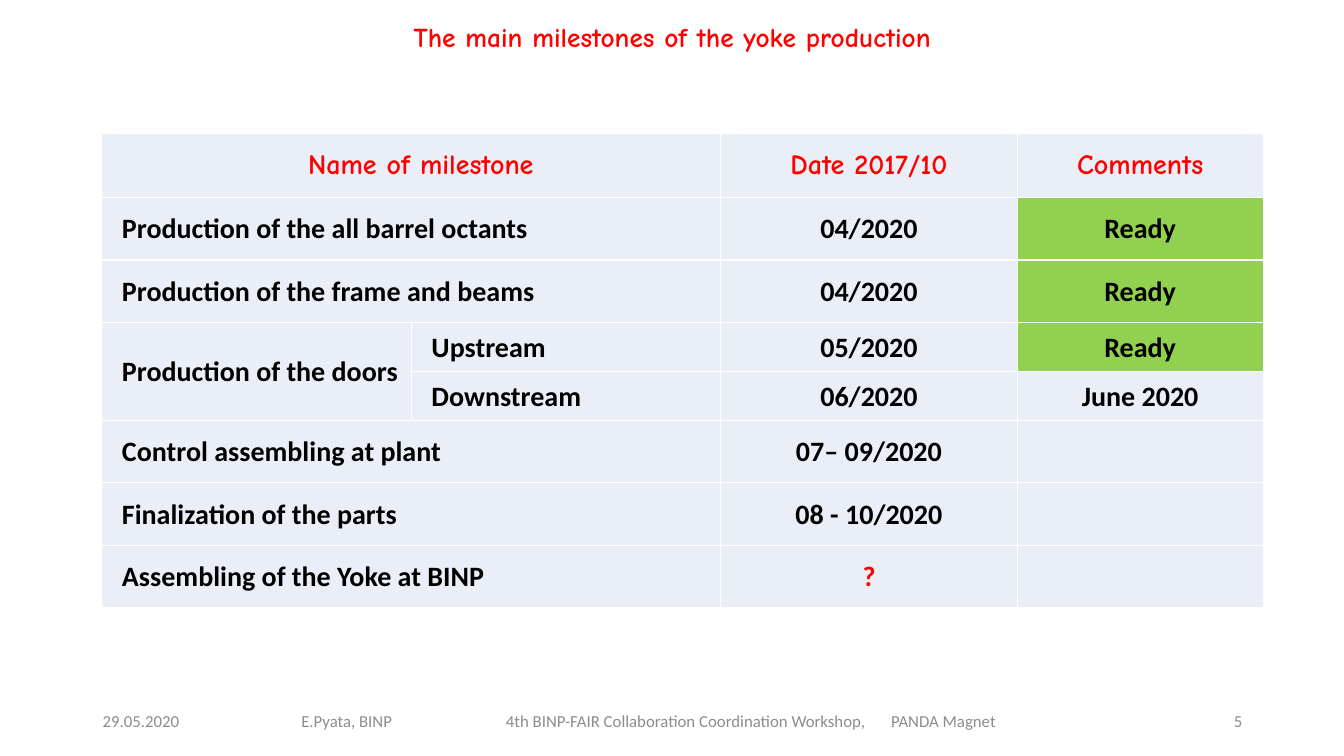
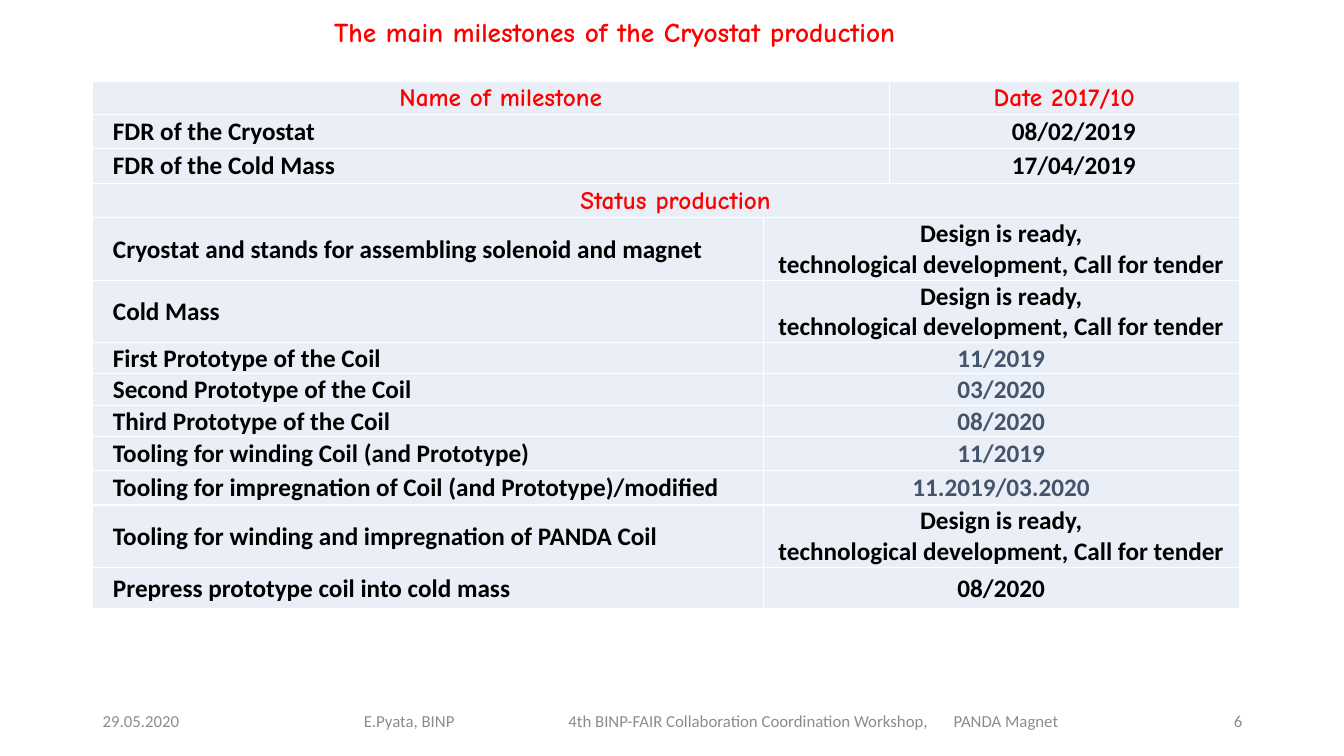
import pptx
import pptx.dml.color
import pptx.enum.text
import pptx.oxml
import pptx.oxml.ns
import pptx.util

Inches = pptx.util.Inches
ALIGN = pptx.enum.text.PP_ALIGN
MIDDLE = pptx.enum.text.MSO_ANCHOR.MIDDLE
TOP = pptx.enum.text.MSO_ANCHOR.TOP

# Shared style
BODY_FONT, ACCENT_FONT = "Calibri", "Comic Neue"
RED, BLACK, SLATE, GRAY = "FF0000", "000000", "44546A", "8C8C8C"
PALE_BLUE, GREEN, WHITE = "EAEFF7", "92D050", "FFFFFF"

# Markers for cells that continue a neighbour
LEFT, ABOVE = "left", "above"

# Cell kinds: text format, fill and left inset
CENTERED = dict(align=ALIGN.CENTER, bold=True)
HEADING = dict(CENTERED, font=ACCENT_FONT, color=RED)
CELL_KINDS = {
    "wide heading": (HEADING, PALE_BLUE, 0.2),
    "heading": (HEADING, PALE_BLUE, 0.01),
    "name": (dict(bold=True), PALE_BLUE, 0.2),
    "value": (CENTERED, PALE_BLUE, 0.01),
    "indented value": (CENTERED, PALE_BLUE, 0.2),
    "ready": (CENTERED, GREEN, 0.01),
    "past date": (dict(CENTERED, color=SLATE), PALE_BLUE, 0.01),
    "open": (dict(CENTERED, color=RED), PALE_BLUE, 0.01),
}


def rgb(value):
    return pptx.dml.color.RGBColor.from_string(value)


def write_text(frame, text, size=12, font=BODY_FONT, color=BLACK, bold=False,
               align=ALIGN.LEFT, line_spacing=None, tabs=()):
    """Fill a text frame, one paragraph for each line of text."""
    for index, line in enumerate(text.split("\n")):
        paragraph = frame.paragraphs[0] if index == 0 else frame.add_paragraph()
        paragraph.alignment = align
        if line_spacing:
            paragraph.line_spacing = line_spacing
        if tabs:
            properties = paragraph._p.get_or_add_pPr()
            tab_list = pptx.oxml.ns.qn("a:tabLst")
            stops = properties.makeelement(tab_list, {})
            for position in tabs:
                stops.append(stops.makeelement(
                    pptx.oxml.ns.qn("a:tab"),
                    {"pos": str(Inches(position)), "algn": "l"}))
            properties.append(stops)
        run = paragraph.add_run()
        run.text = line
        run.font.size = pptx.util.Pt(size)
        run.font.name = font
        run.font.bold = bold
        run.font.color.rgb = rgb(color)


class MilestoneDeck:
    def __init__(self):
        self.presentation = pptx.Presentation()
        self.presentation.slide_width = Inches(13.33)
        self.presentation.slide_height = Inches(7.5)
        self.slide = None

    def add_slide(self):
        layout = self.presentation.slide_layouts[6]
        self.slide = self.presentation.slides.add_slide(layout)

    def text_box(self, left, top, width, height, text, anchor=MIDDLE, **text_format):
        shape = self.slide.shapes.add_textbox(
            Inches(left), Inches(top), Inches(width), Inches(height))
        shape.text_frame.word_wrap = True
        shape.text_frame.vertical_anchor = anchor
        write_text(shape.text_frame, text, **text_format)

    def title(self, left, top, text):
        self.text_box(left, top, 9.4, 0.4, text, TOP, size=19.5, font=ACCENT_FONT,
                      color=RED, bold=True, align=ALIGN.CENTER, line_spacing=0.8)

    def footer(self, number, event_left):
        top, height = 6.95, 0.4
        self.text_box(0.92, top, 1.5, height, "29.05.2020", color=GRAY)
        self.text_box(event_left, top, 7.3, height,
                      "E.Pyata, BINP\t4th BINP-FAIR Collaboration Coordination "
                      "Workshop,\tPANDA Magnet", color=GRAY, tabs=(2.03, 5.85))
        self.text_box(11.42, top, 1, height, str(number), color=GRAY,
                      align=ALIGN.RIGHT)

    def style_cell(self, cell, fill, left_inset):
        cell.margin_left = Inches(left_inset)
        cell.margin_right = cell.margin_top = Inches(0.01)
        cell.margin_bottom = 0
        cell.vertical_anchor = MIDDLE
        properties = cell._tc.get_or_add_tcPr()
        for side in ("lnL", "lnR", "lnT", "lnB"):
            properties.append(pptx.oxml.parse_xml(
                f'<a:{side} {pptx.oxml.ns.nsdecls("a")} w="12700"><a:solidFill>'
                f'<a:srgbClr val="{WHITE}"/></a:solidFill></a:{side}>'))
        cell.fill.solid()
        cell.fill.fore_color.rgb = rgb(fill)

    def table(self, left, top, columns, heights, rows, size):
        table = self.slide.shapes.add_table(
            len(rows), len(columns), Inches(left), Inches(top),
            Inches(sum(columns)), Inches(sum(heights))).table
        for column, width in zip(table.columns, columns):
            column.width = Inches(width)
        for row, height in zip(table.rows, heights):
            row.height = Inches(height)
        for y, row in enumerate(rows):
            for x, entry in enumerate(row):
                cell = table.cell(y, x)
                if entry in (LEFT, ABOVE):
                    self.style_cell(cell, PALE_BLUE, 0.01)
                    continue
                text, kind = entry
                text_format, fill, inset = CELL_KINDS[kind]
                self.style_cell(cell, fill, inset)
                if text:
                    write_text(cell.text_frame, text, size=size, **text_format)
                # Extend over the markers to the right and below
                last_x, last_y = x, y
                while last_x + 1 < len(row) and row[last_x + 1] == LEFT:
                    last_x += 1
                while last_y + 1 < len(rows) and rows[last_y + 1][x] == ABOVE:
                    last_y += 1
                if (last_x, last_y) != (x, y):
                    cell.merge(table.cell(last_y, last_x))


def yoke_slide(deck):
    deck.add_slide()
    deck.footer(5, 2.89)
    deck.title(1.97, 0.21, "The main milestones of the yoke production")
    ready, no_comment = ("Ready", "ready"), ("", "value")
    rows = [
        [("Name of milestone", "wide heading"), LEFT,
         ("Date 2017/10", "heading"), ("Comments", "heading")],
        [("Production of the all barrel octants", "name"), LEFT,
         ("04/2020", "value"), ready],
        [("Production of the frame and beams", "name"), LEFT,
         ("04/2020", "value"), ready],
        [("Production of the doors", "name"), ("Upstream", "name"),
         ("05/2020", "value"), ready],
        [ABOVE, ("Downstream", "name"),
         ("06/2020", "value"), ("June 2020", "value")],
        [("Control assembling at plant", "name"), LEFT,
         ("07– 09/2020", "value"), no_comment],
        [("Finalization of the parts", "name"), LEFT,
         ("08 - 10/2020", "value"), no_comment],
        [("Assembling of the Yoke at BINP", "name"), LEFT,
         ("?", "open"), no_comment],
    ]
    heights = [0.64, 0.62, 0.62, 0.49, 0.48, 0.62, 0.62, 0.62]
    deck.table(1.01, 1.32, [3.07, 3.07, 2.94, 2.44], heights, rows, size=20)


def cryostat_slide(deck):
    deck.add_slide()
    deck.footer(6, 3.51)
    deck.title(1.4, 0.16, "The main milestones of the Cryostat production")
    tender = ("Design is ready,\ntechnological development, Call for tender", "value")
    status = [
        ("Cryostat and stands for assembling solenoid and magnet", tender),
        ("Cold Mass", tender),
        ("First Prototype of the Coil", ("11/2019", "past date")),
        ("Second Prototype of the Coil", ("03/2020", "past date")),
        ("Third Prototype of the Coil", ("08/2020", "past date")),
        ("Tooling for winding Coil (and Prototype)", ("11/2019", "past date")),
        ("Tooling for impregnation of Coil (and Prototype)/modified",
         ("11.2019/03.2020", "past date")),
        ("Tooling for winding and impregnation of PANDA Coil", tender),
        ("Prepress prototype coil into cold mass", ("08/2020", "value")),
    ]
    rows = [
        [("Name of milestone", "wide heading"), LEFT, ("Date 2017/10", "heading")],
        [("FDR of the Cryostat", "name"), LEFT, ("08/02/2019", "indented value")],
        [("FDR of the Cold Mass", "name"), LEFT, ("17/04/2019", "indented value")],
        [("Status production", "wide heading"), LEFT, LEFT],
    ] + [[(name, "name"), value, LEFT] for name, value in status]
    heights = [0.33, 0.33, 0.35, 0.34, 0.62, 0.62, 0.31, 0.31, 0.31,
               0.34, 0.34, 0.62, 0.41]
    deck.table(0.92, 0.81, [6.65, 1.25, 3.47], heights, rows, size=18)


def main():
    deck = MilestoneDeck()
    yoke_slide(deck)
    cryostat_slide(deck)
    deck.presentation.save("out.pptx")


if __name__ == "__main__":
    main()
